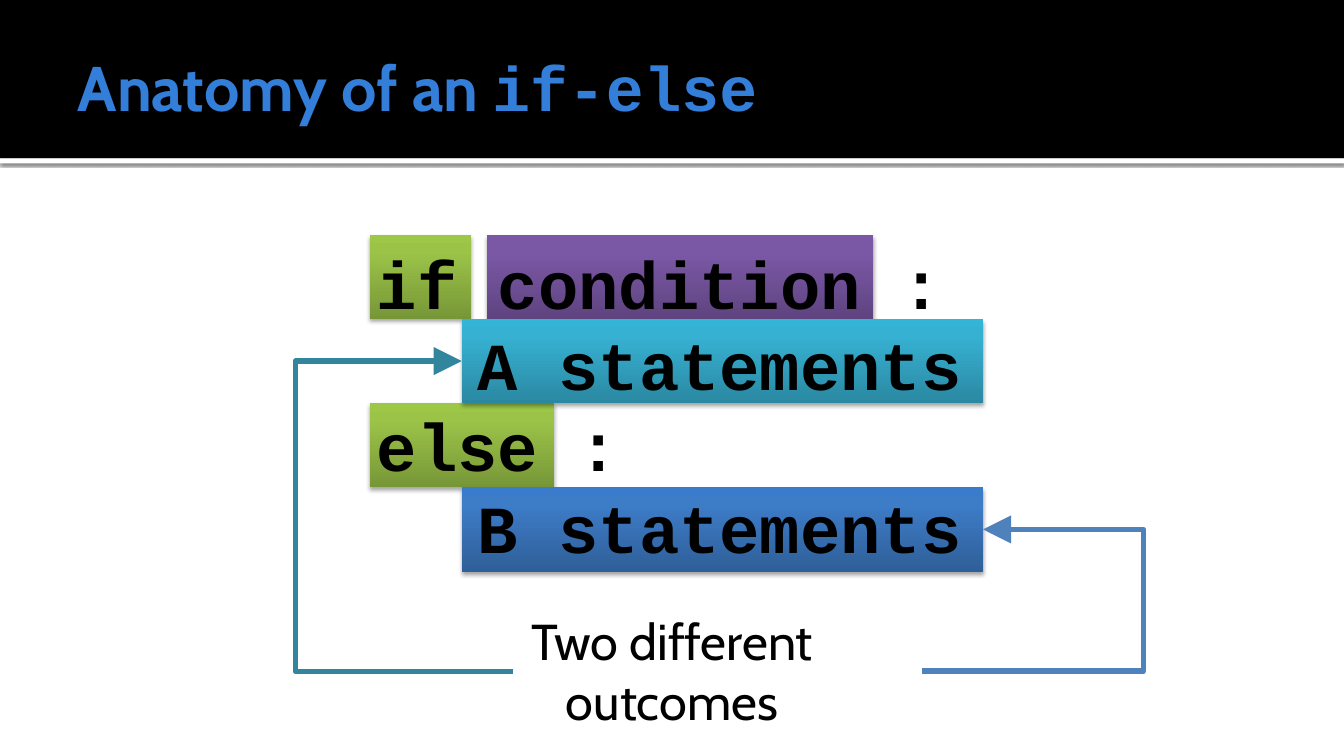
from pptx import Presentation
from pptx.dml.color import RGBColor
from pptx.enum import shapes, text
from pptx.oxml import parse_xml
from pptx.oxml.ns import nsdecls, qn
from pptx.util import Inches, Pt
from lxml import etree

BLACK, WHITE = RGBColor(0, 0, 0), RGBColor(255, 255, 255)
TITLE_BLUE = RGBColor(0x33, 0x7E, 0xD9)
TEAL, BLUE = RGBColor(0x31, 0x85, 0x9C), RGBColor(0x4F, 0x81, 0xBD)
BODY, CODE = "Cabin", "Courier New"

# Gradient colours from bottom to top, at 0, 80 and 100 percent
GREEN_GRAD = ("779737", "9BC348", "9DC746")
PURPLE_GRAD = ("5F4480", "7B58A6", "7C57A8")
TEAL_GRAD = ("2A88A2", "37B1D2", "34B4D6")
BLUE_GRAD = ("2F5F99", "3D7CC7", "3A7CCB")

TITLE = [("Anatomy of an ", BODY), ("if-else", CODE)]
CODE_LINES = ["if condition :", "\tA statements", "else :", "\tB statements"]
CODE_TAB = 1
CAPTION = "Two different outcomes"

ROW_TOP, ROW_H = 2.33, 0.835
# code row, left, width, gradient
BLOCKS = [
    (2, 3.67, 1.83, GREEN_GRAD),
    (0, 3.67, 1, GREEN_GRAD),
    (0, 4.83, 3.83, PURPLE_GRAD),
    (3, 4.58, 5.17, BLUE_GRAD),
    (1, 4.58, 5.17, TEAL_GRAD),
]
# start x, bend x, end x, code row, colour
ARROWS = [(9.14, 11.34, 9.75, 3, BLUE), (5.09, 2.93, 4.58, 1, TEAL)]
ARROW_START_Y = 6.66


def add_rect(s, x, y, w, h, color=None):
    sp = s.shapes.add_shape(shapes.MSO_SHAPE.RECTANGLE,
                            Inches(x), Inches(y), Inches(w), Inches(h))
    sp.shadow.inherit = False
    sp.line.fill.background()
    if color is not None:
        sp.fill.solid()
        sp.fill.fore_color.rgb = color
    return sp


def add_shadow(sp, alpha, blur, dist):
    sp._element.spPr.find(qn("a:effectLst")).append(parse_xml(
        f'<a:outerShdw {nsdecls("a")} blurRad="{Pt(blur)}" dist="{Pt(dist)}" '
        f'dir="5400000" rotWithShape="0"><a:srgbClr val="000000">'
        f'<a:alpha val="{alpha * 1000}"/></a:srgbClr></a:outerShdw>'))


def set_gradient(sp, colors):
    stops = "".join(f'<a:gs pos="{pos * 1000}"><a:srgbClr val="{c}"/></a:gs>'
                    for pos, c in zip((0, 80, 100), colors))
    sp._element.spPr.find(qn("a:prstGeom")).addnext(parse_xml(
        f'<a:gradFill {nsdecls("a")} rotWithShape="1"><a:gsLst>{stops}</a:gsLst>'
        f'<a:lin ang="16200000" scaled="0"/></a:gradFill>'))


def add_bent_arrow(s, x1, bend, x2, y2, color):
    c = s.shapes.add_connector(shapes.MSO_CONNECTOR.ELBOW, Inches(x1),
                               Inches(ARROW_START_Y), Inches(x2), Inches(y2))
    c.line.color.rgb = color
    c.line.width = Pt(4)
    spPr = c._element.spPr
    geom = spPr.find(qn("a:prstGeom"))
    guides = geom.get_or_add_avLst()
    adj = round((bend - x1) / (x2 - x1) * 100000)
    etree.SubElement(guides, qn("a:gd"), name="adj1", fmla=f"val {adj}")
    ln = spPr.find(qn("a:ln"))
    etree.SubElement(ln, qn("a:round"))
    etree.SubElement(ln, qn("a:tailEnd"), type="triangle", w="lg", len="lg")
    etree.SubElement(spPr, qn("a:effectLst"))


def add_tab_stop(p, pos):
    tabs = etree.SubElement(p._p.get_or_add_pPr(), qn("a:tabLst"))
    etree.SubElement(tabs, qn("a:tab"), pos=str(Inches(pos)), algn="l")


def add_run(p, words, font, size, color, bold=False):
    r = p.add_run()
    r.text = words
    r.font.name, r.font.size, r.font.bold = font, Pt(size), bold
    r.font.color.rgb = color


def add_text_frame(s, x, y, w, h):
    tf = s.shapes.add_textbox(Inches(x), Inches(y), Inches(w), Inches(h)).text_frame
    tf.word_wrap = True
    return tf


def main():
    prs = Presentation()
    prs.slide_width, prs.slide_height = Inches(13.33), Inches(7.5)
    s = prs.slides.add_slide(prs.slide_layouts[5])

    add_shadow(add_rect(s, 0, 1.57, 13.33, 0.05, WHITE), 60, 2.5, 0.8)
    add_rect(s, 0, 0, 13.33, 1.57, BLACK)

    title = s.shapes.title
    s.shapes._spTree.append(title._element)  # in front of the black band
    title.left, title.top = Inches(0.67), Inches(0.17)
    title.width, title.height = Inches(12), Inches(1.37)
    tf = title.text_frame
    tf.vertical_anchor = text.MSO_ANCHOR.MIDDLE
    tf.auto_size = text.MSO_AUTO_SIZE.NONE
    tf.margin_right = Inches(0.05)
    p = tf.paragraphs[0]
    p.alignment = text.PP_ALIGN.LEFT
    for words, font in TITLE:
        add_run(p, words, font, 45, TITLE_BLUE, True)

    for row, x, w, colors in BLOCKS:
        block = add_rect(s, x, ROW_TOP + row * ROW_H, w, ROW_H)
        set_gradient(block, colors)
        add_shadow(block, 35, 3.1, 1.8)

    for x1, bend, x2, row, color in ARROWS:
        add_bent_arrow(s, x1, bend, x2, ROW_TOP + (row + 0.5) * ROW_H, color)

    p = add_text_frame(s, 5, 6, 3.33, 1.31).paragraphs[0]
    p.alignment = text.PP_ALIGN.CENTER
    add_run(p, CAPTION, BODY, 36, BLACK)

    tf = add_text_frame(s, 3.64, 2.35, 6.83, 4.14)
    for i, line in enumerate(CODE_LINES):
        p = tf.add_paragraph() if i else tf.paragraphs[0]
        add_tab_stop(p, CODE_TAB)
        p.line_spacing = Pt(58)
        add_run(p, line, CODE, 48, BLACK, True)

    prs.save("out.pptx")


if __name__ == "__main__":
    main()
